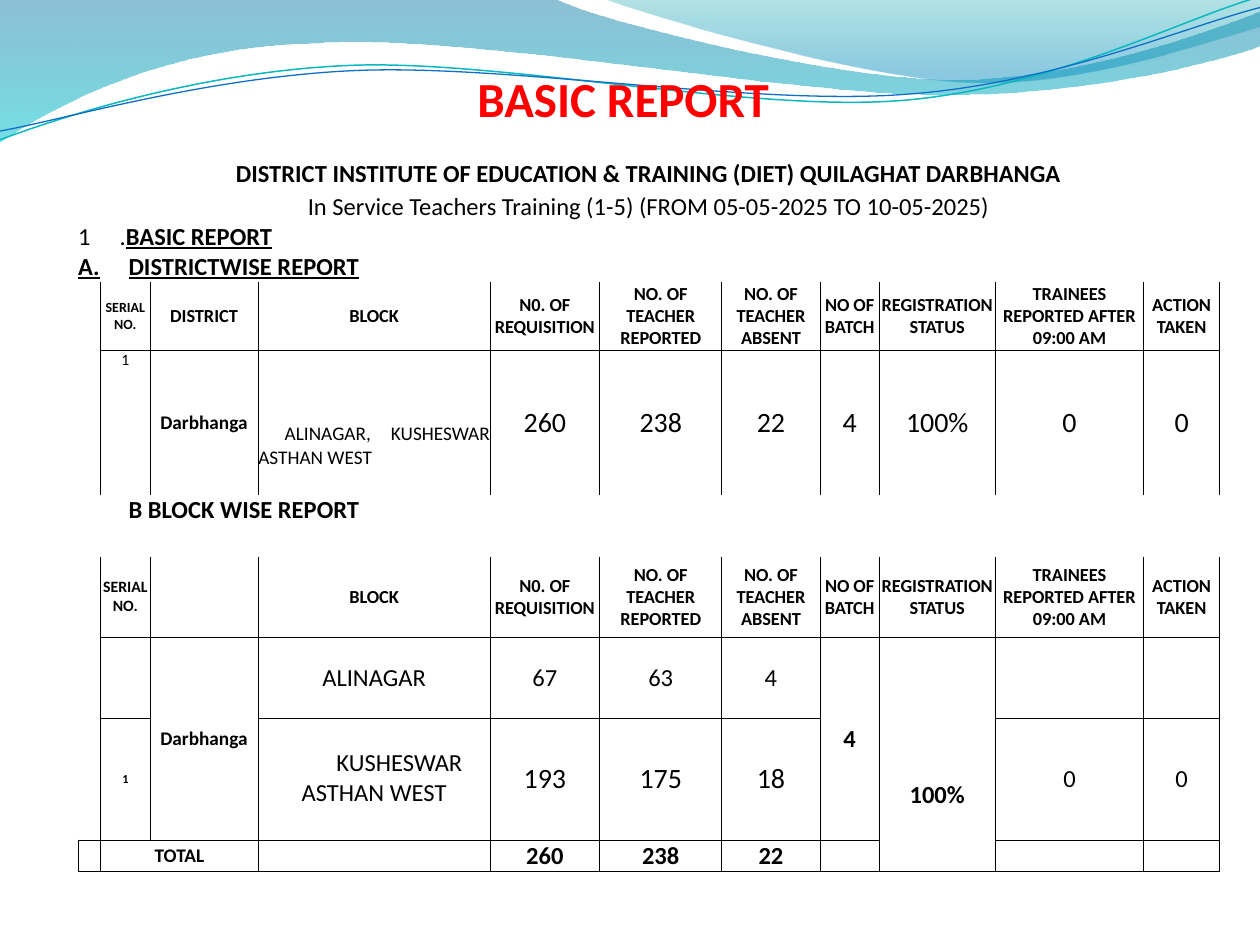
from lxml.etree import SubElement as Sub
from pptx import Presentation
from pptx.dml.color import RGBColor as Rgb
from pptx.enum.text import MSO_ANCHOR as Anchor, PP_ALIGN as Align
from pptx.oxml.ns import qn
from pptx.util import Inches, Pt

HUES = {
    "black": "000000", "white": "FFFFFF", "red": "FF0000",
    "deep": "0074A1", "aqua": "00C6CF", "teal": "00A1A9", "sky": "008BBF",
    "mint": "0AB8BF", "blue": "0F6FC6",
}


def write(frame, text, size=10.5, bold=True, line=False, hue="black",
          align=Align.CENTER, indent=0, tab=0):
    para = frame.paragraphs[0]
    para.alignment = align
    props = para._p.get_or_add_pPr()
    if indent:
        props.set("indent", str(Inches(indent)))
    if tab:
        stops = Sub(props, qn("a:tabLst"))
        Sub(stops, qn("a:tab"), pos=str(Inches(tab)), algn="l")
    run = para.add_run()
    run.text = text
    font = run.font
    font.name, font.size, font.bold, font.underline = "Calibri", Pt(size), bold, line
    font.color.rgb = Rgb.from_string(HUES[hue])


def draw(start, path, closed):
    spots = [part[i:i + 2] for part in path for i in range(0, len(part), 2)]
    pen = shapes.build_freeform(Inches(start[0]), Inches(start[1]))
    pen.add_line_segments([(Inches(x), Inches(y)) for x, y in spots], close=closed)
    shape = pen.convert_to_shape()
    shape.shadow.inherit = False
    track = next(shape._element.iter(qn("a:path")))
    legs = iter(track.findall(qn("a:lnTo")))
    for part in path:
        group = [next(legs) for _ in range(len(part) // 2)]
        if len(group) == 3:
            bend = Sub(track, qn("a:cubicBezTo"))
            group[0].addprevious(bend)
            for leg in group:
                bend.append(leg[0])
                track.remove(leg)
    return shape


prs = Presentation()
prs.slide_width, prs.slide_height = Inches(10), Inches(7.5)
slide = prs.slides.add_slide(prs.slide_layouts[6])
shapes = slide.shapes

waves = [
    ((0, 0), [(4.4, -0.01), (4.76, 0.17, 6.64, 0.63, 7.58, 0.63),
              (8.53, 0.63, 9.58, 0.26, 10, 0.09), (10.01, 0.36),
              (9.83, 0.44, 8.7, 0.76, 7.46, 0.75), (6.22, 0.75, 3.82, 0.28, 2.57, 0.34),
              (1.29, 0.36, 0.46, 0.83, -0.01, 1.13)],
     [("deep", 0, 45), ("aqua", 1, 55)]),
    ((4.79, -0.01), [(5.09, 0.11, 6.82, 0.62, 7.69, 0.65),
                     (8.56, 0.69, 9.61, 0.32, 10, 0.21), (10, 0)],
     [("teal", 0, 30), ("sky", 0.8, 45)]),
]
for start, path, tones in waves:
    wave = draw(start, path, True)
    wave.line.fill.background()
    wave.fill.gradient()
    wave.fill.gradient_angle = 270
    for stop, (hue, place, alpha) in zip(wave.fill.gradient_stops, tones):
        stop.color.rgb = Rgb.from_string(HUES[hue])
        stop.position = place
        tint = stop._gs.find(qn("a:srgbClr"))
        Sub(tint, qn("a:alpha"), val=str(alpha * 1000))

curves = [
    ((0, 1.11), [(0.48, 0.93, 1.58, 0.57, 2.77, 0.52), (3.95, 0.47, 5.93, 0.89, 7.13, 0.8),
                 (8.33, 0.71, 9.38, 0.15, 9.98, -0.02)], "mint", 0.85),
    ((0, 1.04), [(0.47, 0.96, 1.64, 0.61, 2.83, 0.56), (4.03, 0.51, 5.97, 0.84, 7.17, 0.75),
                 (8.36, 0.67, 9.41, 0.21, 10, 0.06)], "blue", 0.75),
]
for start, path, hue, width in curves:
    curve = draw(start, path, False)
    curve.fill.background()
    curve.line.color.rgb = Rgb.from_string(HUES[hue])
    curve.line.width = Pt(width)

box = shapes.add_textbox(Inches(0.39), Inches(0.62), Inches(9.11), Inches(0.39))
title = box.text_frame
title.word_wrap = True
title.vertical_anchor = Anchor.BOTTOM
title.margin_left = title.margin_right = title.margin_bottom = 0
write(title, "BASIC REPORT", size=28, hue="red")

cols = [0.18, 0.39, 0.86, 1.84, 0.87, 0.97, 0.78, 0.47, 0.92, 1.18, 0.6]
rows = [0.24, 0.26, 0.24, 0.24, 0.54, 1.15, 0.49, 0.64, 0.64, 0.97, 0.25]
grid = shapes.add_table(len(rows), len(cols), Inches(0.62), Inches(1.26),
                        Inches(sum(cols)), Inches(sum(rows))).table
grid.first_row = grid.horz_banding = False
for col, width in zip(grid.columns, cols):
    col.width = Inches(width)
for row, height in zip(grid.rows, rows):
    row.height = Inches(height)

wide = (0, 1, 2, 3, 6)
for r in range(len(rows)):
    for c in range(len(cols)):
        cell = grid.cell(r, c)
        cell.margin_left = cell.margin_right = cell.margin_top = cell.margin_bottom = 0
        cell.vertical_anchor = Anchor.BOTTOM if r < 4 else Anchor.MIDDLE
        Sub(cell.text_frame.paragraphs[0]._p, qn("a:endParaRPr"), sz="900")
        if r in wide:
            sides = ""
        elif c == 0 and r < 10:
            sides = "RB" if r == 9 else "R"
        elif c == 8 and r > 7:
            sides = "LRT" if r == 8 else "LRB"
        else:
            sides = "LR" + ("" if r in (4, 7) else "T") + ("" if r == 5 else "B")
        props = cell._tc.get_or_add_tcPr()
        for side in "LRTB":
            edge = Sub(props, qn("a:ln" + side), w=str(Pt(0.5)))
            if side in sides:
                Sub(Sub(edge, qn("a:solidFill")), qn("a:srgbClr"), val=HUES["black"])
            else:
                Sub(edge, qn("a:noFill"))
        if c and r not in wide:
            cell.fill.solid()
            cell.fill.fore_color.rgb = Rgb.from_string(HUES["white"])
        else:
            cell.fill.background()

spans = [((r, 0), (r, 10)) for r in wide]
spans += [((8, 2), (9, 2)), ((8, 7), (9, 7)), ((9, 8), (10, 8)), ((10, 1), (10, 2))]
for first, last in spans:
    grid.cell(*first).merge(grid.cell(*last))

lead = [grid.cell(r, 0).text_frame for r in wide]
write(lead[0], "DISTRICT INSTITUTE OF EDUCATION & TRAINING (DIET) QUILAGHAT DARBHANGA", size=14)
write(lead[1], "In Service Teachers Training (1-5) (FROM 05-05-2025 TO 10-05-2025)",
      size=14, bold=False)
write(lead[2], "1\t.", size=14, bold=False, align=Align.LEFT, tab=0.33)
write(lead[2], "BASIC REPORT", size=14, line=True, align=Align.LEFT)
write(lead[3], "A.\tDISTRICTWISE REPORT", size=14, line=True, align=Align.LEFT, tab=0.4)
write(lead[4], "B BLOCK WISE REPORT", size=14, align=Align.LEFT)
grid.cell(6, 0).margin_left = Inches(0.4)
grid.cell(6, 0).vertical_anchor = Anchor.TOP

heads = ["BLOCK", "N0. OF REQUISITION", "NO. OF TEACHER REPORTED", "NO. OF TEACHER ABSENT",
         "NO OF BATCH", "REGISTRATION STATUS", "TRAINEES REPORTED AFTER 09:00 AM",
         "ACTION TAKEN"]
for r, size in ((4, 8), (7, 9)):
    write(grid.cell(r, 1).text_frame, "SERIAL NO.", size=size)
    for c, head in enumerate(heads, 3):
        write(grid.cell(r, c).text_frame, head)
write(grid.cell(4, 2).text_frame, "DISTRICT")

for r, c, size, bold, words in [
    (5, 1, 9, False, ["1"]),
    (5, 2, 11, True, ["Darbhanga"]),
    (5, 4, 16, False, ["260", "238", "22", "4", "100%", "0", "0"]),
    (8, 2, 11, True, ["Darbhanga"]),
    (8, 3, 14, False, ["ALINAGAR", "67", "63", "4"]),
    (8, 7, 14, True, ["4"]),
    (9, 1, 7, True, ["1"]),
    (9, 4, 16, False, ["193", "175", "18"]),
    (9, 8, 14, True, ["100%"]),
    (9, 9, 14, False, ["0", "0"]),
    (10, 1, 11, True, ["TOTAL"]),
    (10, 4, 14, True, ["260", "238", "22"]),
]:
    for k, word in enumerate(words):
        write(grid.cell(r, c + k).text_frame, word, size=size, bold=bold)

grid.cell(5, 1).vertical_anchor = Anchor.TOP
for r, text, size, align, indent, top in [
    (5, "ALINAGAR, KUSHESWAR ASTHAN WEST", 11, Align.JUSTIFY, 0.21, 0.57),
    (9, "KUSHESWAR ASTHAN WEST", 14, Align.CENTER, 0.4, 0.24),
]:
    cell = grid.cell(r, 3)
    cell.vertical_anchor = Anchor.TOP
    cell.margin_top = Inches(top)
    write(cell.text_frame, text, size=size, bold=False, align=align, indent=indent)

prs.save("out.pptx")
